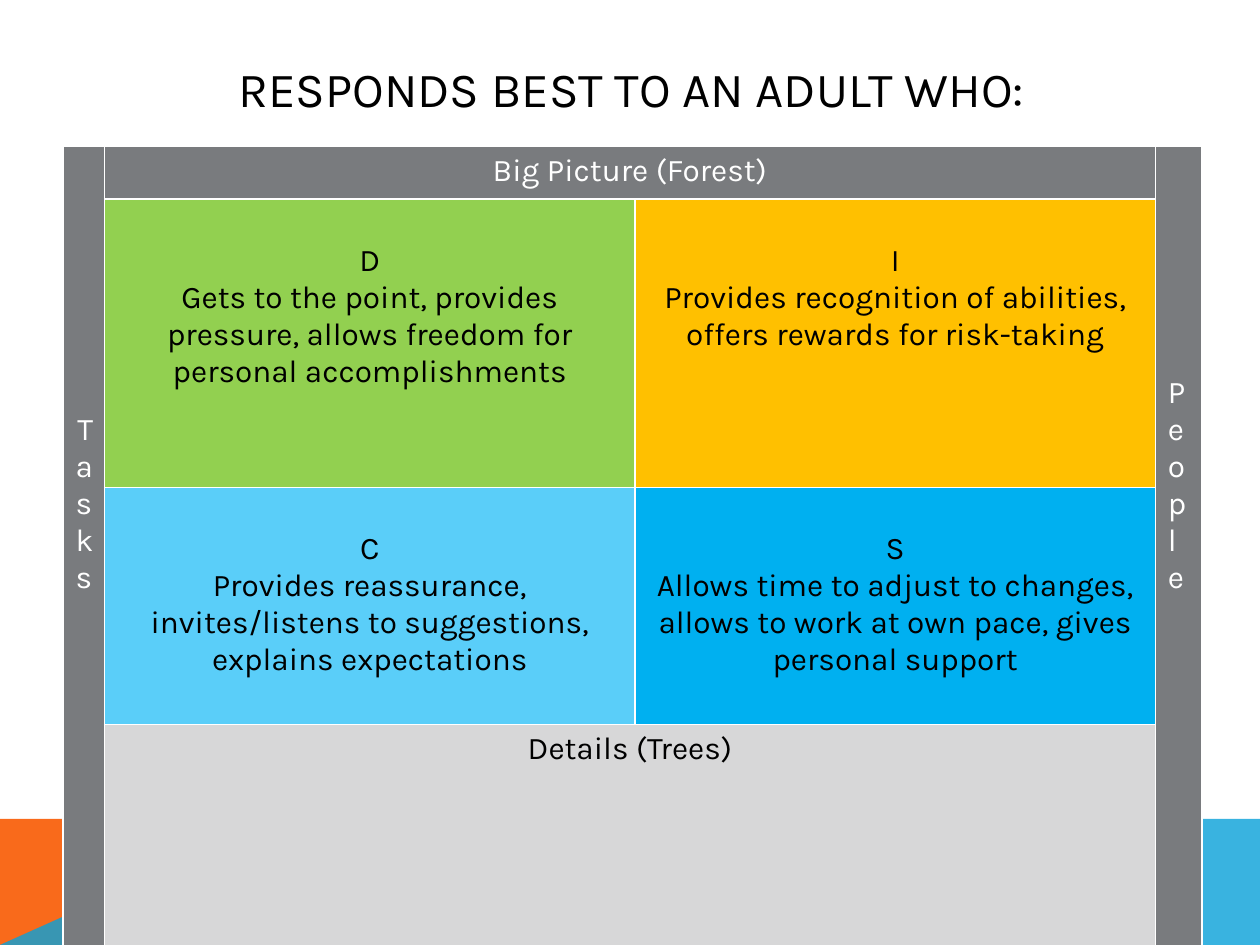
from dataclasses import dataclass

from lxml.etree import SubElement
from pptx import Presentation
from pptx.dml.color import RGBColor
from pptx.enum.text import MSO_ANCHOR, PP_ALIGN
from pptx.oxml.ns import qn
from pptx.util import Inches, Pt

SLIDE_WIDTH, SLIDE_HEIGHT = Inches(10), Inches(7.5)


@dataclass(frozen=True)
class Theme:
    font: str = "Karla"
    title_size: int = 28
    body_size: int = 18
    line_height: float = 0.294  # inches per line of body text
    margin: float = 0.05
    black: str = "000000"
    white: str = "FFFFFF"
    gray: str = "797B7E"
    light_gray: str = "D7D7D8"
    green: str = "92D050"
    yellow: str = "FFC000"
    light_blue: str = "5ACEF9"
    blue: str = "00B0F0"
    orange: str = "F96A1B"
    footer_blue: str = "08A1D9"


@dataclass(frozen=True)
class Panel:
    row: int
    column: int
    lines: tuple[str, ...]
    fill: str
    color: str = Theme.black
    rows: int = 1
    columns: int = 1
    lines_above: int = 0
    alignment: PP_ALIGN = PP_ALIGN.CENTER


@dataclass(frozen=True)
class Wedge:
    points: tuple[tuple[float, float], ...]  # shares of the slide's size
    fill: str
    opacity: int = 100


THEME = Theme()
FOOTER_TOP, FOOTER_SPLIT = 6.5 / 7.5, 0.223

WEDGES = (
    Wedge(((0, 1), (0, FOOTER_TOP), (FOOTER_SPLIT, FOOTER_TOP), (0.391, 1)), THEME.orange),
    Wedge(((0, 1), (FOOTER_SPLIT, FOOTER_TOP), (1, FOOTER_TOP), (1, 1)), THEME.footer_blue, 80),
)

TABLE_LEFT, TABLE_TOP = 0.5, 1.16
COLUMN_WIDTHS = (0.33, 4.21, 4.13, 0.37)
UPPER_ROWS = (0.42, 2.29, 1.88)
# The last row runs to the foot of the slide
ROW_HEIGHTS = (*UPPER_ROWS, 7.5 - TABLE_TOP - sum(UPPER_ROWS))

PANELS = (
    Panel(0, 0, ("Tasks",), THEME.gray, THEME.white, rows=4, lines_above=7),
    Panel(0, 1, ("Big Picture (Forest)",), THEME.gray, THEME.white, columns=2),
    Panel(0, 3, ("People",), THEME.gray, THEME.white, rows=4, lines_above=6,
          alignment=PP_ALIGN.LEFT),
    Panel(1, 1, ("D", "Gets to the point, provides pressure, allows freedom for "
                 "personal accomplishments"), THEME.green, lines_above=1),
    Panel(1, 2, ("I", "Provides recognition of abilities, offers rewards for "
                 "risk-taking"), THEME.yellow, lines_above=1),
    Panel(2, 1, ("C", "Provides reassurance, invites/listens to suggestions, "
                 "explains expectations"), THEME.light_blue, lines_above=1),
    Panel(2, 2, ("S", "Allows time to adjust to changes, allows to work at own pace, "
                 "gives personal support"), THEME.blue, lines_above=1),
    Panel(3, 1, ("Details (Trees)",), THEME.light_gray, columns=2),
)


def format_paragraph(paragraph, size: int, color: str, alignment: PP_ALIGN) -> None:
    paragraph.alignment = alignment
    paragraph.font.name = THEME.font
    paragraph.font.size = Pt(size)
    paragraph.font.color.rgb = RGBColor.from_string(color)


def draw_wedge(slide, wedge: Wedge) -> None:
    start, *others = [(x * SLIDE_WIDTH, y * SLIDE_HEIGHT) for x, y in wedge.points]
    builder = slide.shapes.build_freeform(*start)
    builder.add_line_segments(others, close=True)
    shape = builder.convert_to_shape()
    shape.shadow.inherit = False
    shape.line.fill.background()
    shape.fill.solid()
    shape.fill.fore_color.rgb = RGBColor.from_string(wedge.fill)
    if wedge.opacity < 100:
        color = shape.element.spPr.find(f"{qn('a:solidFill')}/{qn('a:srgbClr')}")
        SubElement(color, qn("a:alpha"), val=str(wedge.opacity * 1000))


def set_borders(cell, color: str, points: float) -> None:
    properties = cell._tc.get_or_add_tcPr()
    for side in ("L", "R", "T", "B"):
        line = SubElement(properties, qn(f"a:ln{side}"), w=str(Pt(points)))
        fill = SubElement(line, qn("a:solidFill"))
        SubElement(fill, qn("a:srgbClr"), val=color)


def draw_panel(table, panel: Panel) -> None:
    cell = table.cell(panel.row, panel.column)
    if panel.rows > 1 or panel.columns > 1:
        cell.merge(table.cell(panel.row + panel.rows - 1, panel.column + panel.columns - 1))
    set_borders(cell, THEME.white, 1)
    cell.fill.solid()
    cell.fill.fore_color.rgb = RGBColor.from_string(panel.fill)
    cell.vertical_anchor = MSO_ANCHOR.TOP
    cell.margin_top = Inches(THEME.margin + panel.lines_above * THEME.line_height)
    cell.text = "\n".join(panel.lines)
    for paragraph in cell.text_frame.paragraphs:
        format_paragraph(paragraph, THEME.body_size, panel.color, panel.alignment)


def draw_table(slide) -> None:
    table = slide.shapes.add_table(
        len(ROW_HEIGHTS), len(COLUMN_WIDTHS), Inches(TABLE_LEFT), Inches(TABLE_TOP),
        Inches(sum(COLUMN_WIDTHS)), Inches(sum(ROW_HEIGHTS))).table
    table.first_row = table.horz_banding = False
    for column, width in zip(table.columns, COLUMN_WIDTHS):
        column.width = Inches(width)
    for row, height in zip(table.rows, ROW_HEIGHTS):
        row.height = Inches(height)
    for panel in PANELS:
        draw_panel(table, panel)


def draw_title(slide, text: str) -> None:
    title = slide.shapes.title
    title.left, title.top = Inches(0.9), Inches(0.4)
    title.width, title.height = Inches(8.22), Inches(0.6)
    title.text_frame.text = text
    title.text_frame.vertical_anchor = MSO_ANCHOR.MIDDLE
    format_paragraph(title.text_frame.paragraphs[0], THEME.title_size, THEME.black,
                     PP_ALIGN.CENTER)


def main() -> None:
    presentation = Presentation()
    presentation.slide_width, presentation.slide_height = SLIDE_WIDTH, SLIDE_HEIGHT
    slide = presentation.slides.add_slide(presentation.slide_layouts[5])  # title only
    draw_title(slide, "RESPONDS BEST TO AN ADULT WHO:")
    # Footer wedges lie behind the table
    for wedge in WEDGES:
        draw_wedge(slide, wedge)
    draw_table(slide)
    presentation.save("out.pptx")


if __name__ == "__main__":
    main()
